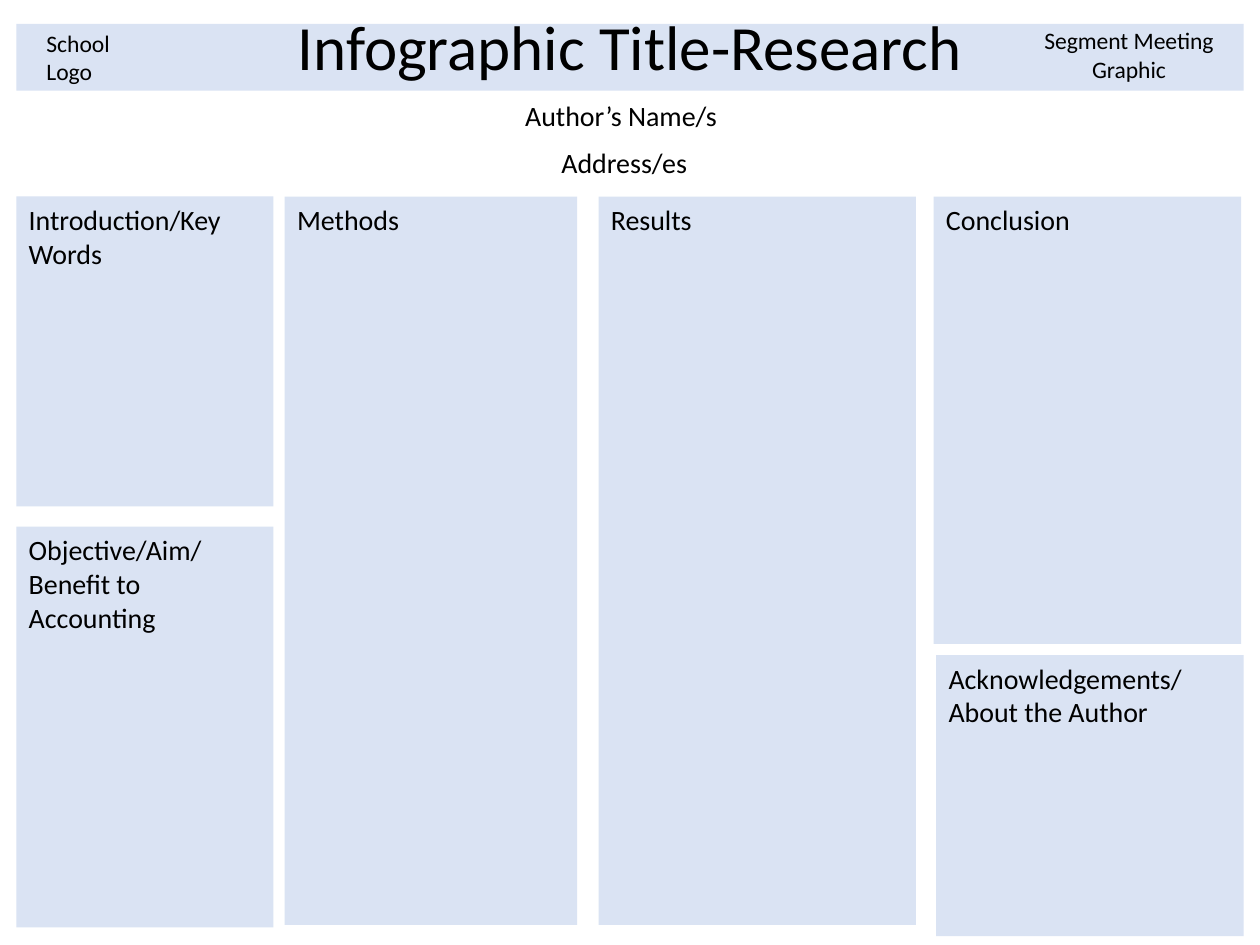
from pptx import Presentation
from pptx import util as u
from pptx.dml.color import RGBColor
from pptx.enum import shapes, text

COLORS = {"panel": "DAE3F3", "ink": "000000"}
FONT = "Calibri"
LEFT, CENTER = text.PP_ALIGN.LEFT, text.PP_ALIGN.CENTER
TOP, BOTTOM = text.MSO_ANCHOR.TOP, text.MSO_ANCHOR.BOTTOM

BODY_TOP = 1.56
# Each column: left, width, panels stacked downwards as (heading, height, gap above, indent)
COLUMNS = [
    (0.13, 2.04, [("Introduction/Key Words", 2.46, 0, 0),
                  ("Objective/Aim/\vBenefit to Accounting", 3.18, 0.16, 0)]),
    (2.26, 2.32, [("Methods", 5.78, 0, 0)]),
    (4.75, 2.52, [("Results", 5.78, 0, 0)]),
    (7.41, 2.44, [("Conclusion", 3.55, 0, 0),
                  ("Acknowledgements/\vAbout the Author", 2.23, 0.09, 0.02)]),
]
TITLE = ("Infographic Title-Research", (0.13, 0.19, 9.74, 0.53))
BYLINE = ("Author’s Name/s\n Address/es", (0.1, 0.76, 9.66, 0.71))
CORNERS = [
    ("School Logo", (0.27, 0.18, 0.88, 0.56), LEFT),
    ("Segment Meeting Graphic", (8.05, 0.16, 1.82, 0.56), CENTER),
]


def write(shape, content, size, align=LEFT, anchor=TOP, line=None, before=None):
    tf = shape.text_frame
    tf.word_wrap = True
    tf.vertical_anchor = anchor
    tf.text = content
    for p in tf.paragraphs:
        p.alignment = align
        p.line_spacing = line
        p.space_before = before
        for r in p.runs:
            r.font.name = FONT
            r.font.size = u.Pt(size)
            r.font.color.rgb = RGBColor.from_string(COLORS["ink"])


def add_panel(s, box):
    panel = s.shapes.add_shape(shapes.MSO_SHAPE.RECTANGLE, *map(u.Inches, box))
    panel.shadow.inherit = False
    panel.fill.solid()
    panel.fill.fore_color.rgb = RGBColor.from_string(COLORS["panel"])
    panel.line.fill.background()
    return panel


def add_label(s, box):
    return s.shapes.add_textbox(*map(u.Inches, box))


def main():
    prs = Presentation()
    prs.slide_width, prs.slide_height = u.Inches(10), u.Inches(7.5)
    s = prs.slides.add_slide(prs.slide_layouts[6])

    content, box = TITLE
    write(add_panel(s, box), content, 36, CENTER, BOTTOM, line=0.9)
    content, box = BYLINE
    write(add_label(s, box), content, 16, CENTER, line=0.9, before=u.Pt(10))

    for left, width, panels in COLUMNS:
        top = BODY_TOP
        for heading, height, gap, indent in panels:
            top += gap
            write(add_panel(s, (left + indent, top, width, height)), heading, 16)
            top += height

    for content, box, align in CORNERS:
        write(add_label(s, box), content, 13.5, align)

    prs.save("out.pptx")


if __name__ == "__main__":
    main()
